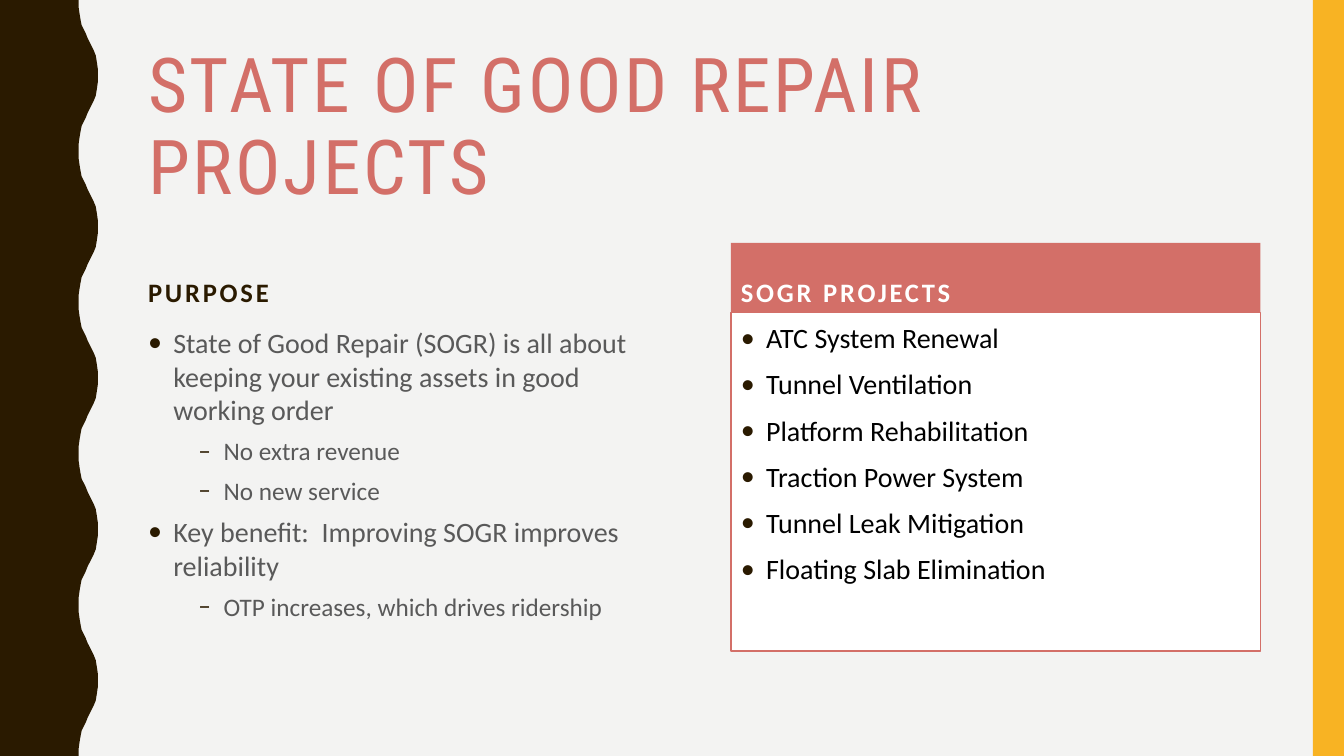
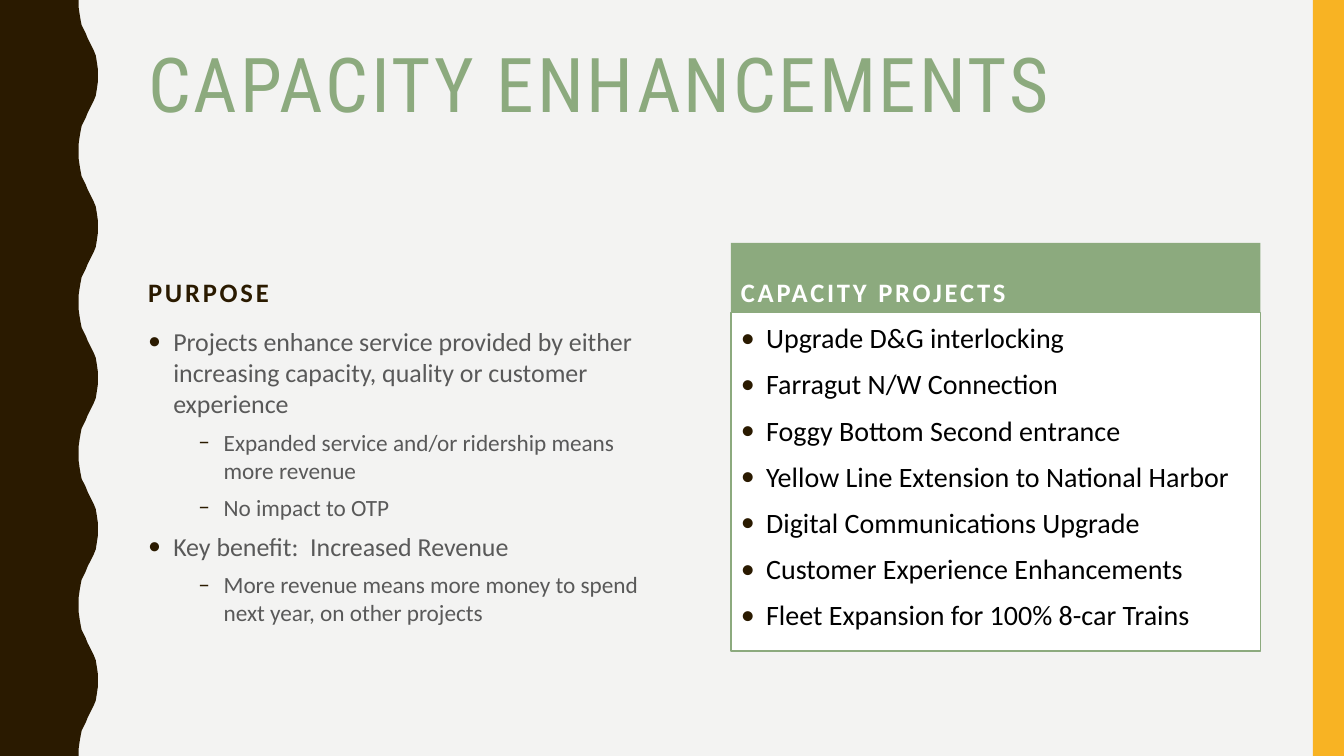
from dataclasses import dataclass

from lxml import etree
from pptx import Presentation
from pptx.dml.color import RGBColor
from pptx.enum.shapes import MSO_SHAPE
from pptx.enum.text import MSO_ANCHOR, PP_ALIGN
from pptx.oxml.ns import qn
from pptx.util import Pt

RECT = MSO_SHAPE.RECTANGLE
TOP, BOTTOM = MSO_ANCHOR.TOP, MSO_ANCHOR.BOTTOM
LEFT = PP_ALIGN.LEFT
PX = 9144  # EMU per px, 100 px to the inch
W, H = 1333, 750


@dataclass(frozen=True)
class Theme:
    paper: str = "F3F3F2"
    dark: str = "2A1A00"
    gold: str = "F8B323"
    white: str = "FFFFFF"
    black: str = "000000"
    grey: str = "595959"
    title_font: str = "Roboto Condensed"
    body_font: str = "Calibri"
    title_size: float = 54
    heading_size: float = 19
    list_size: float = 20
    space_before: float = 6.6
    tracking: int = 200


T = Theme()

# Half a wave of the left band as (x, y), mirrored to make a full one
HALF_WAVE = [(78, 0), (78, 7), (79, 14), (80, 20), (81, 25), (83, 29), (85, 33), (87, 38),
             (89, 42), (91, 46), (93, 50), (95, 55), (96, 61), (97, 68), (97, 75)]
WAVE = 150
FULL_WAVE = HALF_WAVE + [(x, WAVE - y) for x, y in reversed(HALF_WAVE[:-1])]

COL_W = 525
LEFT_X, RIGHT_X = 137, 725
HEAD_Y, HEAD_H = 241, 69
LIST_BOTTOM = 646
BULLETS = [("•", 25), ("–", 75)]  # character and text indent by level
HANGING = 25

# Left items are (level, text); sizes are those of the two levels
SLIDES = [
    dict(
        title="STATE OF GOOD REPAIR PROJECTS",
        accent="D36F68",
        sizes=(20, 18),
        purpose=[
            (0, "State of Good Repair (SOGR) is all about keeping your existing assets "
                "in good working order"),
            (1, "No extra revenue"),
            (1, "No new service"),
            (0, "Key benefit:  Improving SOGR improves reliability"),
            (1, "OTP increases, which drives ridership"),
        ],
        heading="SOGR PROJECTS",
        projects=["ATC System Renewal", "Tunnel Ventilation", "Platform Rehabilitation",
                  "Traction Power System", "Tunnel Leak Mitigation",
                  "Floating Slab Elimination"],
    ),
    dict(
        title="CAPACITY ENHANCEMENTS",
        accent="8CAA7E",
        sizes=(18.5, 16.6),
        purpose=[
            (0, "Projects enhance service provided by either increasing capacity, "
                "quality or customer experience"),
            (1, "Expanded service and/or ridership means more revenue"),
            (1, "No impact to OTP"),
            (0, "Key benefit:  Increased Revenue"),
            (1, "More revenue means more money to spend next year, on other projects"),
        ],
        heading="CAPACITY PROJECTS",
        projects=["Upgrade D&G interlocking", "Farragut N/W Connection",
                  "Foggy Bottom Second entrance",
                  "Yellow Line Extension to National Harbor",
                  "Digital Communications Upgrade", "Customer Experience Enhancements",
                  "Fleet Expansion for 100% 8-car Trains"],
    ),
]


def paint(sp, fill, line=None):
    sp.shadow.inherit = False
    sp.fill.solid()
    sp.fill.fore_color.rgb = RGBColor.from_string(fill)
    if line:
        sp.line.color.rgb = RGBColor.from_string(line)
        sp.line.width = Pt(1)
    else:
        sp.line.fill.background()


def write(sp, items, sizes, color, font=T.body_font, anchor=TOP, bold=False,
          tracking=0, bullets=False, spacing=1.0, before=T.space_before):
    """Fill a shape with one paragraph for each (level, text) item."""
    tf = sp.text_frame
    tf.word_wrap = True
    tf.vertical_anchor = anchor
    for i, (level, text) in enumerate(items):
        p = tf.paragraphs[0] if i == 0 else tf.add_paragraph()
        p.alignment = LEFT
        p.level = level
        p.line_spacing = spacing
        p.space_before = Pt(before)
        if bullets:
            char, indent = BULLETS[level]
            pPr = p._p.get_or_add_pPr()
            pPr.set("marL", str(indent * PX))
            pPr.set("indent", str(-HANGING * PX))
            clr = etree.SubElement(pPr, qn("a:buClr"))
            etree.SubElement(clr, qn("a:srgbClr"), val=T.dark)
            etree.SubElement(pPr, qn("a:buFont"), typeface=T.body_font)
            etree.SubElement(pPr, qn("a:buChar"), char=char)
        r = p.add_run()
        r.text = text
        r.font.name = font
        r.font.size = Pt(sizes[level])
        r.font.bold = bold
        r.font.color.rgb = RGBColor.from_string(color)
        if tracking:
            r._r.get_or_add_rPr().set("spc", str(tracking))


prs = Presentation()
prs.slide_width, prs.slide_height = W * PX, H * PX
blank = prs.slide_layouts[6]

for content in SLIDES:
    s = prs.slides.add_slide(blank)
    shapes = s.shapes
    accent = content["accent"]
    s.background.fill.solid()
    s.background.fill.fore_color.rgb = RGBColor.from_string(T.paper)

    # Side bands
    edge = [(x, y + top) for top in range(0, H, WAVE) for x, y in FULL_WAVE]
    fb = shapes.build_freeform(0, 0, scale=PX)
    fb.add_line_segments(edge + [(0, H)], close=True)
    paint(fb.convert_to_shape(), T.dark)
    paint(shapes.add_shape(RECT, 1302 * PX, 0, 31 * PX, H * PX), T.gold)

    # Title
    title = shapes.add_textbox(LEFT_X * PX, 42 * PX, 1112 * PX, 163 * PX)
    write(title, [(0, content["title"])], [T.title_size], accent, font=T.title_font,
          tracking=T.tracking, spacing=0.9, before=0)

    # Column headings
    purpose_head = shapes.add_textbox(LEFT_X * PX, HEAD_Y * PX, COL_W * PX, HEAD_H * PX)
    project_head = shapes.add_shape(RECT, RIGHT_X * PX, HEAD_Y * PX, COL_W * PX, HEAD_H * PX)
    paint(project_head, accent)
    for sp, text, color in [(purpose_head, "PURPOSE", T.dark),
                            (project_head, content["heading"], T.white)]:
        write(sp, [(0, text)], [T.heading_size], color, anchor=BOTTOM, bold=True,
              tracking=T.tracking)

    # Column lists
    list_y = 318
    purpose = shapes.add_textbox(LEFT_X * PX, list_y * PX, COL_W * PX,
                                 (LIST_BOTTOM - list_y) * PX)
    write(purpose, content["purpose"], content["sizes"], T.grey, bullets=True)

    list_y = HEAD_Y + HEAD_H
    projects = shapes.add_shape(RECT, RIGHT_X * PX, list_y * PX, COL_W * PX,
                                (LIST_BOTTOM - list_y) * PX)
    paint(projects, T.white, accent)
    write(projects, [(0, text) for text in content["projects"]], [T.list_size], T.black,
          bullets=True, spacing=1.1)

prs.save("out.pptx")
